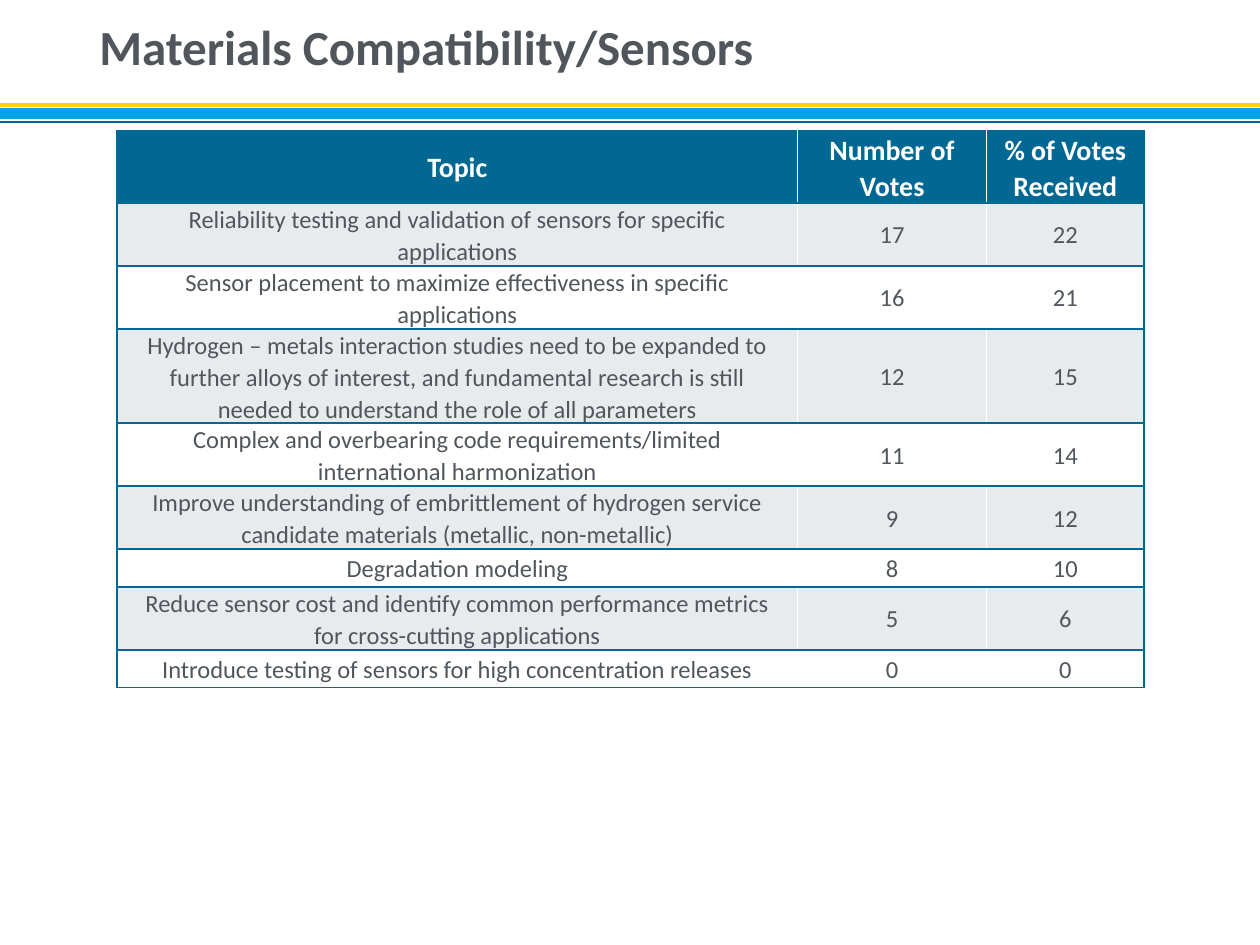
"""Build the slide of votes on materials compatibility and sensors."""
from lxml.etree import SubElement
from pptx import Presentation
from pptx.dml.color import RGBColor
from pptx.enum.shapes import MSO_CONNECTOR
from pptx.enum.text import MSO_ANCHOR, PP_ALIGN
from pptx.oxml.ns import qn
from pptx.util import Pt

PX = 9144
FONT = "Calibri"
TEAL = RGBColor(0x00, 0x68, 0x92)
BLUE = RGBColor(0x00, 0xA4, 0xE4)
GOLD = RGBColor(0xFF, 0xD2, 0x00)
GRAY = RGBColor(0x50, 0x56, 0x5C)
PALE = RGBColor(0xE7, 0xEB, 0xEE)
WHITE = RGBColor(0xFF, 0xFF, 0xFF)

RULES = [(90, BLUE, 6), (97, TEAL, 1.5), (83, GOLD, 2.25)]
WIDTHS = [540, 150, 125]
ROWS = [
    ("Topic", "Number of Votes", "% of Votes Received"),
    ("Reliability testing and validation of sensors for specific applications", 17, 22),
    ("Sensor placement to maximize effectiveness in specific applications", 16, 21),
    ("Hydrogen – metals interaction studies need to be expanded to further alloys of "
     "interest, and fundamental research is still needed to understand the role of all "
     "parameters", 12, 15),
    ("Complex and overbearing code requirements/limited international harmonization", 11, 14),
    ("Improve understanding of embrittlement of hydrogen service candidate materials "
     "(metallic, non-metallic)", 9, 12),
    ("Degradation modeling", 8, 10),
    ("Reduce sensor cost and identify common performance metrics for cross-cutting "
     "applications", 5, 6),
    ("Introduce testing of sensors for high concentration releases", 0, 0),
]


def style(para, size, color, bold):
    font = para.runs[0].font
    font.name, font.size, font.bold = FONT, Pt(size), bold
    font.color.rgb = color


def border(cell, sides):
    props = cell._tc.get_or_add_tcPr()
    for side in sides:
        line = SubElement(props, qn(f"a:ln{side}"), w=str(Pt(1)))
        fill = SubElement(line, qn("a:solidFill"))
        SubElement(fill, qn("a:srgbClr"), val=str(TEAL))


deck = Presentation()
deck.slide_width, deck.slide_height = 1000 * PX, 750 * PX
slide = deck.slides.add_slide(deck.slide_layouts[6])
shapes = slide.shapes

for y, color, width in RULES:
    rule = shapes.add_connector(MSO_CONNECTOR.STRAIGHT, 0, y * PX, 1000 * PX, y * PX)
    rule.line.color.rgb = color
    rule.line.width = Pt(width)
    SubElement(rule._element.spPr, qn("a:effectLst"))

frame = shapes.add_textbox(69 * PX, 0, 862 * PX, 79 * PX).text_frame
frame.word_wrap = True
frame.vertical_anchor = MSO_ANCHOR.MIDDLE
frame.text = "Materials Compatibility/Sensors"
title = frame.paragraphs[0]
title.line_spacing = 0.9
style(title, 28, GRAY, True)

table = shapes.add_table(
    len(ROWS), len(WIDTHS), 93 * PX, 104 * PX, sum(WIDTHS) * PX, len(ROWS) * 30 * PX
).table
for column, width in zip(table.columns, WIDTHS):
    column.width = width * PX

for r, row in enumerate(ROWS):
    head = r == 0
    for c, value in enumerate(row):
        cell = table.cell(r, c)
        border(cell, ["LTB", "TB", "RTB"][c])
        cell.fill.solid()
        cell.fill.fore_color.rgb = TEAL if head else PALE if r % 2 else WHITE
        cell.vertical_anchor = MSO_ANCHOR.MIDDLE
        cell.margin_left = cell.margin_right = 10 * PX
        cell.margin_top = cell.margin_bottom = 0
        cell.text_frame.text = str(value)
        para = cell.text_frame.paragraphs[0]
        para.alignment = PP_ALIGN.CENTER
        para.line_spacing = 1.07
        style(para, 16 if head else 14, WHITE if head else GRAY, head)

deck.save("out.pptx")
